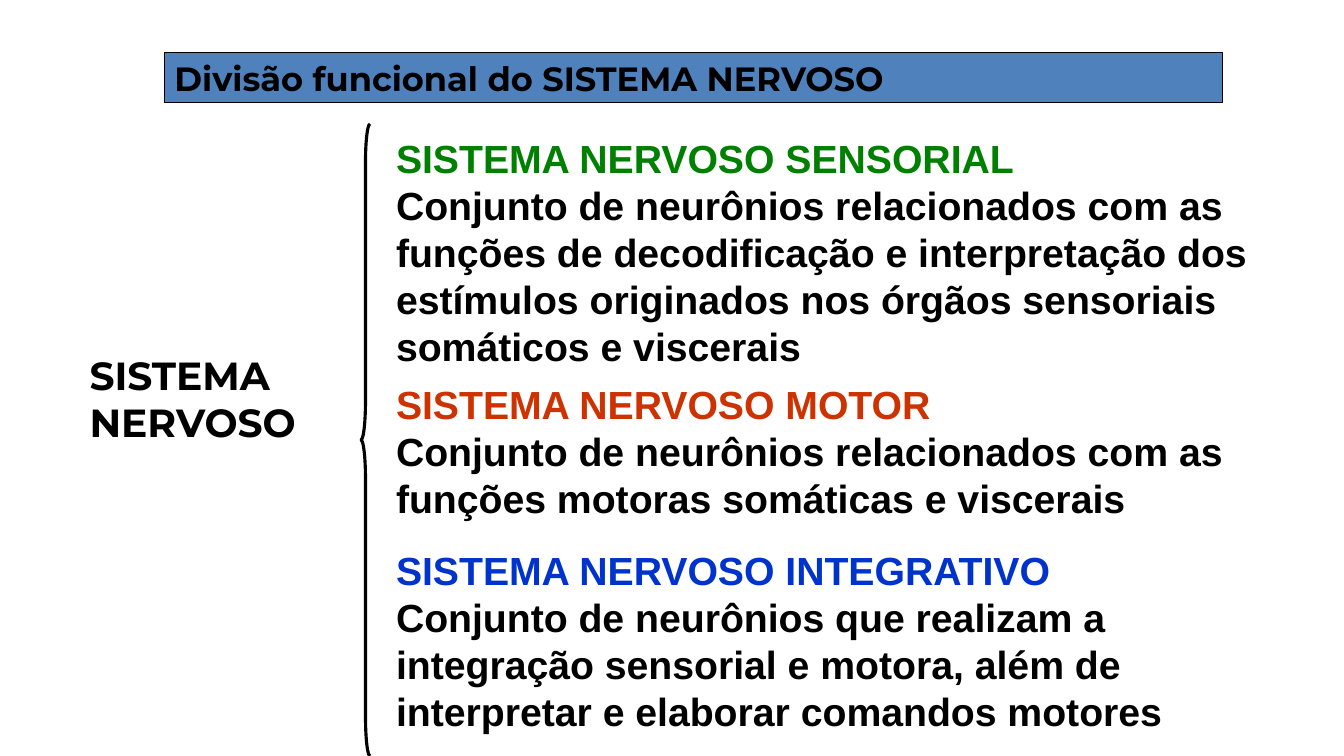
from dataclasses import dataclass

from pptx import Presentation
from pptx.dml.color import RGBColor
from pptx.enum.shapes import MSO_SHAPE
from pptx.enum.text import MSO_ANCHOR, MSO_AUTO_SIZE, PP_ALIGN
from pptx.slide import Slide
from pptx.text.text import TextFrame
from pptx.util import Inches, Pt


@dataclass(frozen=True)
class Theme:
    ink: str = "000000"
    bar: str = "4F81BD"
    sensory: str = "008000"
    motor: str = "CC3300"
    integrative: str = "0033CC"
    heading_font: str = "Montserrat"
    body_font: str = "Arial"
    title_size: int = 24
    body_size: int = 28


@dataclass(frozen=True)
class Line:
    text: str
    color: str


@dataclass(frozen=True)
class Box:
    left: float
    top: float
    width: float
    height: float

    def lengths(self) -> list[int]:
        return [Inches(v) for v in (self.left, self.top, self.width, self.height)]


@dataclass(frozen=True)
class Division:
    name: str
    definition: str
    color: str
    box: Box


THEME = Theme()
TITLE_BOX = Box(1.63, 0.52, 10.5, 0.5)
LABEL_BOX = Box(0.79, 3.44, 2.34, 1.04)
BRACE_BOX = Box(3.58, 1.23, 0.09, 6.27)
DIVISIONS = [
    Division(
        "SISTEMA NERVOSO SENSORIAL",
        "Conjunto de neurônios relacionados com as funções de decodificação e "
        "interpretação dos estímulos originados nos órgãos sensoriais "
        "somáticos e viscerais",
        THEME.sensory, Box(3.83, 1.28, 9.24, 2.46)),
    Division(
        "SISTEMA NERVOSO MOTOR",
        "Conjunto de neurônios relacionados com as funções motoras somáticas "
        "e viscerais",
        THEME.motor, Box(3.83, 3.72, 9.24, 1.51)),
    Division(
        "SISTEMA NERVOSO INTEGRATIVO",
        "Conjunto de neurônios que realizam a integração sensorial e motora, "
        "além de interpretar e elaborar comandos motores",
        THEME.integrative, Box(3.83, 5.37, 9.13, 1.99)),
]


def write_lines(tf: TextFrame, lines: list[Line], font: str, size: int,
                wrap: bool = True) -> None:
    tf.word_wrap = wrap
    tf.auto_size = MSO_AUTO_SIZE.NONE
    tf.vertical_anchor = MSO_ANCHOR.TOP
    for i, line in enumerate(lines):
        p = tf.add_paragraph() if i else tf.paragraphs[0]
        p.text = line.text
        p.alignment = PP_ALIGN.LEFT
        p.font.name = font
        p.font.size = Pt(size)
        p.font.bold = True
        p.font.color.rgb = RGBColor.from_string(line.color)


def add_title(s: Slide, text: str) -> None:
    title = s.shapes.title
    title.left, title.top, title.width, title.height = TITLE_BOX.lengths()
    title.fill.solid()
    title.fill.fore_color.rgb = RGBColor.from_string(THEME.bar)
    title.line.color.rgb = RGBColor.from_string(THEME.ink)
    title.line.width = Pt(0.75)
    write_lines(title.text_frame, [Line(text, THEME.ink)],
                THEME.heading_font, THEME.title_size)


def add_label(s: Slide, words: list[str]) -> None:
    tf = s.shapes.add_textbox(*LABEL_BOX.lengths()).text_frame
    write_lines(tf, [Line(word, THEME.ink) for word in words],
                THEME.heading_font, THEME.body_size, wrap=False)


def add_brace(s: Slide) -> None:
    brace = s.shapes.add_shape(MSO_SHAPE.LEFT_BRACE, *BRACE_BOX.lengths())
    brace.adjustments[0] = 4.26
    brace.adjustments[1] = 0.5
    brace.shadow.inherit = False
    brace.fill.background()
    brace.line.color.rgb = RGBColor.from_string(THEME.ink)
    brace.line.width = Pt(2.25)


def add_division(s: Slide, division: Division) -> None:
    tf = s.shapes.add_textbox(*division.box.lengths()).text_frame
    lines = [Line(division.name, division.color),
             Line(division.definition, THEME.ink)]
    write_lines(tf, lines, THEME.body_font, THEME.body_size)


def main() -> None:
    prs = Presentation()
    prs.slide_width, prs.slide_height = Inches(13.33), Inches(7.5)
    s = prs.slides.add_slide(prs.slide_layouts.get_by_name("Title Only"))

    # Title bar
    add_title(s, "Divisão funcional do SISTEMA NERVOSO")

    # Whole system and the brace that opens it
    add_label(s, ["SISTEMA", "NERVOSO"])
    add_brace(s)

    # Functional divisions
    for division in DIVISIONS:
        add_division(s, division)

    prs.save("out.pptx")


if __name__ == "__main__":
    main()
